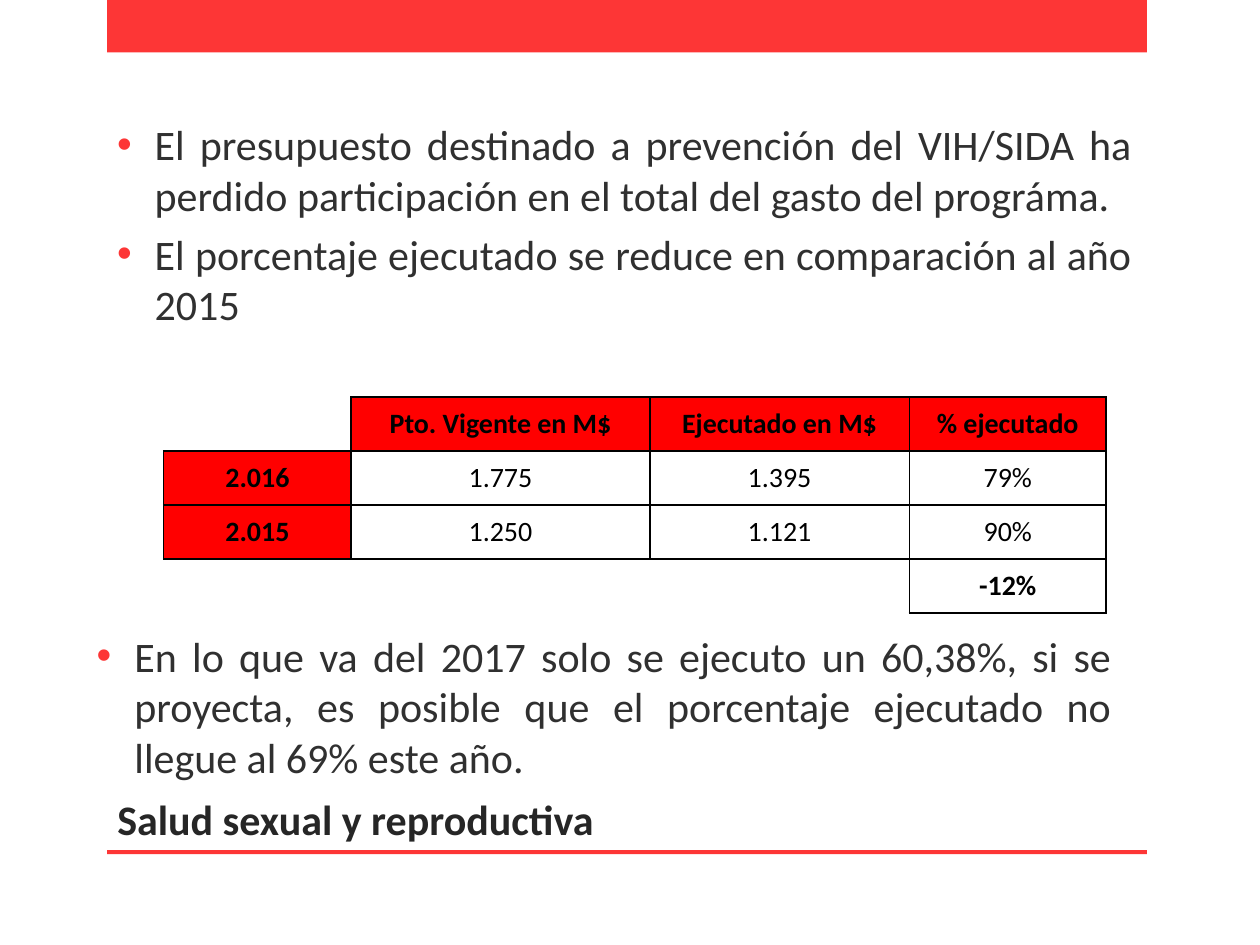
from lxml import etree
from pptx import Presentation
from pptx.dml.color import RGBColor
from pptx.enum import shapes, text
from pptx.oxml import ns
from pptx.util import Cm, Pt

COLORS = {"accent": "FD3636", "header": "FF0000", "title": "262626",
          "body": "303030", "black": "000000"}
FONT = "Calibri"

TITLE = "Salud sexual y reproductiva"
BUDGET_POINTS = [
    "El presupuesto destinado a prevención del VIH/SIDA ha perdido "
    "participación en el total del gasto del prográma. ",
    "El porcentaje ejecutado se reduce en comparación al año 2015",
]
PROJECTION_POINTS = [
    "En lo que va del 2017 solo se ejecuto un 60,38%, si se proyecta, es posible "
    "que el porcentaje ejecutado no llegue al 69% este año.",
]
EXECUTION = [
    ["", "Pto. Vigente en M$", "Ejecutado en M$", "% ejecutado"],
    ["2.016", "1.775", "1.395", "79%"],
    ["2.015", "1.250", "1.121", "90%"],
    ["", "", "", "-12%"],
]
COLUMN_WIDTHS = [3.78, 6.02, 5.23, 3.97]
ROW_HEIGHT = 1.09
BARS = [(2.16, 0, 20.96, 1.06), (2.16, 17.14, 20.96, 0.08)]
# Edge tag -> row and column step to the cell sharing that edge
EDGES = {"a:lnL": (0, -1), "a:lnR": (0, 1), "a:lnT": (-1, 0), "a:lnB": (1, 0)}


def rgb(name):
    return RGBColor.from_string(COLORS[name])


def cm(*lengths):
    return [Cm(length) for length in lengths]


def set_all(target, values):
    for name, value in values.items():
        setattr(target, name, value)


def style(font, size, color, bold=False):
    set_all(font, {"name": FONT, "size": Pt(size), "bold": bold})
    font.color.rgb = rgb(color)


def add_child(parent, tag, **attributes):
    return etree.SubElement(parent, ns.qn(tag), attributes)


def add_bullets(slide, points, box):
    frame = slide.shapes.add_textbox(*cm(*box)).text_frame
    set_all(frame, {"word_wrap": True, "vertical_anchor": text.MSO_ANCHOR.MIDDLE})
    for index, point in enumerate(points):
        paragraph = frame.add_paragraph() if index else frame.paragraphs[0]
        set_all(paragraph, {"alignment": text.PP_ALIGN.JUSTIFY, "space_before": Pt(4.8)})
        run = paragraph.add_run()
        run.text = point
        style(run.font, 24, "body")
        properties = paragraph._p.get_or_add_pPr()
        properties.set("marL", str(Cm(0.76)))
        properties.set("indent", str(Cm(-0.76)))
        add_child(add_child(properties, "a:buClr"), "a:srgbClr", val=COLORS["accent"])
        add_child(properties, "a:buFont", typeface="Arial")
        add_child(properties, "a:buChar", char="•")


def has_text(row, column):
    return (0 <= row < len(EXECUTION) and 0 <= column < len(COLUMN_WIDTHS)
            and bool(EXECUTION[row][column]))


def add_borders(cell, row, column):
    """Draw each edge that touches a cell with text; clear the others."""
    properties = cell._tc.get_or_add_tcPr()
    for tag, (down, right) in EDGES.items():
        line = add_child(properties, tag, w=str(Pt(1)))
        if has_text(row, column) or has_text(row + down, column + right):
            add_child(add_child(line, "a:solidFill"), "a:srgbClr", val=COLORS["black"])
        else:
            add_child(line, "a:noFill")


def add_execution_table(slide):
    rows, columns = len(EXECUTION), len(COLUMN_WIDTHS)
    table = slide.shapes.add_table(
        rows, columns, *cm(3.3, 8, sum(COLUMN_WIDTHS), rows * ROW_HEIGHT)).table
    set_all(table, {"first_row": False, "horz_banding": False})
    for column, width in zip(table.columns, COLUMN_WIDTHS):
        column.width = Cm(width)
    for r, values in enumerate(EXECUTION):
        table.rows[r].height = Cm(ROW_HEIGHT)
        for c, value in enumerate(values):
            cell = table.cell(r, c)
            set_all(cell, {"text": value, "vertical_anchor": text.MSO_ANCHOR.MIDDLE,
                           "margin_left": 0, "margin_right": 0,
                           "margin_top": 0, "margin_bottom": 0})
            is_header = bool(value) and (r == 0 or c == 0)
            paragraph = cell.text_frame.paragraphs[0]
            paragraph.alignment = text.PP_ALIGN.CENTER
            style(paragraph.font, 16, "black", is_header or r == rows - 1)
            for run in paragraph.runs:
                style(run.font, 16, "black", is_header or r == rows - 1)
            add_borders(cell, r, c)
            if is_header:
                cell.fill.solid()
                cell.fill.fore_color.rgb = rgb("header")
            else:
                cell.fill.background()


def add_title(slide):
    title = slide.shapes.title
    set_all(title, dict(zip(("left", "top", "width", "height"),
                            cm(2.11, 15.72, 21.79, 1.42))))
    title.text = TITLE
    set_all(title.text_frame, {"vertical_anchor": text.MSO_ANCHOR.BOTTOM,
                               "word_wrap": True})
    paragraph = title.text_frame.paragraphs[0]
    paragraph.alignment = text.PP_ALIGN.LEFT
    style(paragraph.runs[0].font, 24, "title", True)


def main():
    deck = Presentation()
    set_all(deck, {"slide_width": Cm(25.4), "slide_height": Cm(19.05)})
    slide = deck.slides.add_slide(deck.slide_layouts[5])
    for box in BARS:
        bar = slide.shapes.add_shape(shapes.MSO_SHAPE.RECTANGLE, *cm(*box))
        bar.shadow.inherit = False
        bar.fill.solid()
        bar.fill.fore_color.rgb = rgb("accent")
        bar.line.fill.background()
    add_title(slide)
    add_bullets(slide, BUDGET_POINTS, (2.11, 1.9, 20.96, 5.23))
    add_execution_table(slide)
    add_bullets(slide, PROJECTION_POINTS, (1.7, 12.73, 20.96, 3))
    deck.save("out.pptx")


if __name__ == "__main__":
    main()
